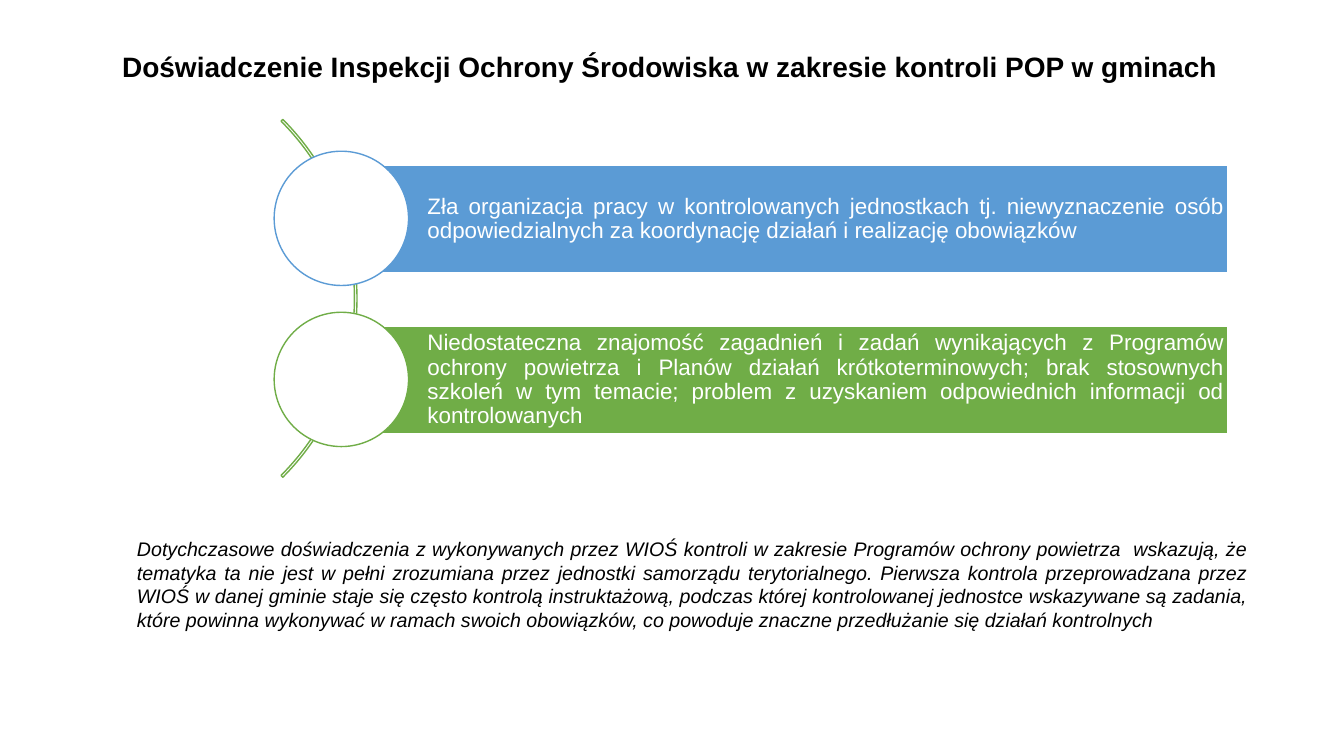
from dataclasses import dataclass

from pptx import Presentation
from pptx.dml.color import RGBColor
from pptx.enum.shapes import MSO_SHAPE
from pptx.enum.text import MSO_ANCHOR, MSO_AUTO_SIZE, PP_ALIGN
from pptx.shapes.autoshape import Shape
from pptx.slide import Slide
from pptx.text.text import TextFrame
from pptx.util import Inches, Pt

SLIDE_WIDTH, SLIDE_HEIGHT = Inches(13.33), Inches(7.5)
WHITE, BLACK, BLUE, GREEN = "FFFFFF", "000000", "5B9BD5", "70AD47"
FINDING_PITCH = 21.3

HEADING = "Doświadczenie Inspekcji Ochrony Środowiska w zakresie kontroli POP w gminach"
SUMMARY = (
    "Dotychczasowe doświadczenia z wykonywanych przez WIOŚ kontroli w zakresie "
    "Programów ochrony powietrza  wskazują, że tematyka ta nie jest w pełni zrozumiana "
    "przez jednostki samorządu terytorialnego. Pierwsza kontrola przeprowadzana przez "
    "WIOŚ w danej gminie staje się często kontrolą instruktażową, podczas której "
    "kontrolowanej jednostce wskazywane są zadania, które powinna wykonywać w ramach "
    "swoich obowiązków, co powoduje znaczne przedłużanie się działań kontrolnych"
)

HEADING_FONT = {"name": "Arial", "size": Pt(20), "bold": True}
FINDING_FONT = {"name": "Arial", "size": Pt(16)}
SUMMARY_FONT = {"name": "Arial", "size": Pt(14), "italic": True}
FINDING_FRAME = {
    "word_wrap": True,
    "vertical_anchor": MSO_ANCHOR.MIDDLE,
    "margin_left": Inches(0.85),
    "margin_top": Inches(0.04),
    "margin_right": Inches(0.04),
    "margin_bottom": Inches(0.04),
}


@dataclass(frozen=True)
class Area:
    """Place on the slide, in percent of its width and height."""

    left: float
    top: float
    width: float
    height: float

    def lowered(self, share: float) -> "Area":
        """Return the same area moved down."""
        return Area(self.left, self.top + share, self.width, self.height)

    def emu(self) -> tuple[int, int, int, int]:
        """Return left, top, width and height as lengths."""
        return (
            round(SLIDE_WIDTH * self.left / 100),
            round(SLIDE_HEIGHT * self.top / 100),
            round(SLIDE_WIDTH * self.width / 100),
            round(SLIDE_HEIGHT * self.height / 100),
        )


@dataclass(frozen=True)
class Finding:
    """One inspection finding and its colour."""

    text: str
    color: str


HEADING_AREA = Area(8.33, 4.8, 86.27, 8.4)
ARC_AREA = Area(-11.1, 6, 37.66, 66.93)
BAR_AREA = Area(25.43, 21.85, 65.94, 14.2)
CIRCLE_AREA = Area(20.4, 20, 10, 17.77)
SUMMARY_AREA = Area(9.45, 70.4, 84.17, 13.87)

FINDINGS = (
    Finding(
        "Zła organizacja pracy w kontrolowanych jednostkach tj. niewyznaczenie osób "
        "odpowiedzialnych za koordynację działań i realizację obowiązków",
        BLUE,
    ),
    Finding(
        "Niedostateczna znajomość zagadnień i zadań wynikających z Programów ochrony "
        "powietrza i Planów działań krótkoterminowych; brak stosownych szkoleń w tym "
        "temacie; problem z uzyskaniem odpowiednich informacji od kontrolowanych",
        GREEN,
    ),
)


def rgb(color: str) -> RGBColor:
    """Turn a hex string into a colour."""
    return RGBColor.from_string(color)


def apply(target: object, values: dict) -> None:
    """Set every named attribute on the target."""
    for name, value in values.items():
        setattr(target, name, value)


def write(frame: TextFrame, text: str, font: dict, color: str, spacing: float) -> None:
    """Fill a text frame with one justified paragraph."""
    paragraph = frame.paragraphs[0]
    apply(paragraph, {"alignment": PP_ALIGN.JUSTIFY, "line_spacing": spacing})
    run = paragraph.add_run()
    run.text = text
    apply(run.font, font)
    run.font.color.rgb = rgb(color)


def add_figure(
    slide: Slide, preset: MSO_SHAPE, area: Area, line: str, fill: str | None = None
) -> Shape:
    """Draw a flat preset shape with a thin outline."""
    figure = slide.shapes.add_shape(preset, *area.emu())
    figure.shadow.inherit = False
    if fill:
        figure.fill.solid()
        figure.fill.fore_color.rgb = rgb(fill)
    else:
        figure.fill.background()
    figure.line.color.rgb = rgb(line)
    figure.line.width = Pt(1)
    return figure


def add_heading(slide: Slide) -> None:
    """Place and fill the title placeholder."""
    heading = slide.shapes.title
    apply(heading, dict(zip(("left", "top", "width", "height"), HEADING_AREA.emu())))
    heading.text_frame.vertical_anchor = MSO_ANCHOR.MIDDLE
    write(heading.text_frame, HEADING, HEADING_FONT, BLACK, 0.9)


def add_finding(slide: Slide, finding: Finding, drop: float) -> None:
    """Draw a coloured bar with its text and the circle over its left end."""
    bar = add_figure(
        slide, MSO_SHAPE.RECTANGLE, BAR_AREA.lowered(drop), WHITE, finding.color
    )
    apply(bar.text_frame, FINDING_FRAME)
    write(bar.text_frame, finding.text, FINDING_FONT, WHITE, 0.9)
    add_figure(slide, MSO_SHAPE.OVAL, CIRCLE_AREA.lowered(drop), finding.color, WHITE)


def add_summary(slide: Slide) -> None:
    """Write the closing remark below the findings."""
    frame = slide.shapes.add_textbox(*SUMMARY_AREA.emu()).text_frame
    apply(frame, {"word_wrap": True, "auto_size": MSO_AUTO_SIZE.SHAPE_TO_FIT_TEXT})
    write(frame, SUMMARY, SUMMARY_FONT, BLACK, 1.0)


def main() -> None:
    """Build and save the slide."""
    deck = Presentation()
    apply(deck, {"slide_width": SLIDE_WIDTH, "slide_height": SLIDE_HEIGHT})
    slide = deck.slides.add_slide(deck.slide_layouts.get_by_name("Title Only"))
    add_heading(slide)
    arc = add_figure(slide, MSO_SHAPE.BLOCK_ARC, ARC_AREA, GREEN)
    for index, value in enumerate((189, 27, 0.5 / 100)):
        arc.adjustments[index] = value
    for row, finding in enumerate(FINDINGS):
        add_finding(slide, finding, row * FINDING_PITCH)
    add_summary(slide)
    deck.save("out.pptx")


if __name__ == "__main__":
    main()
